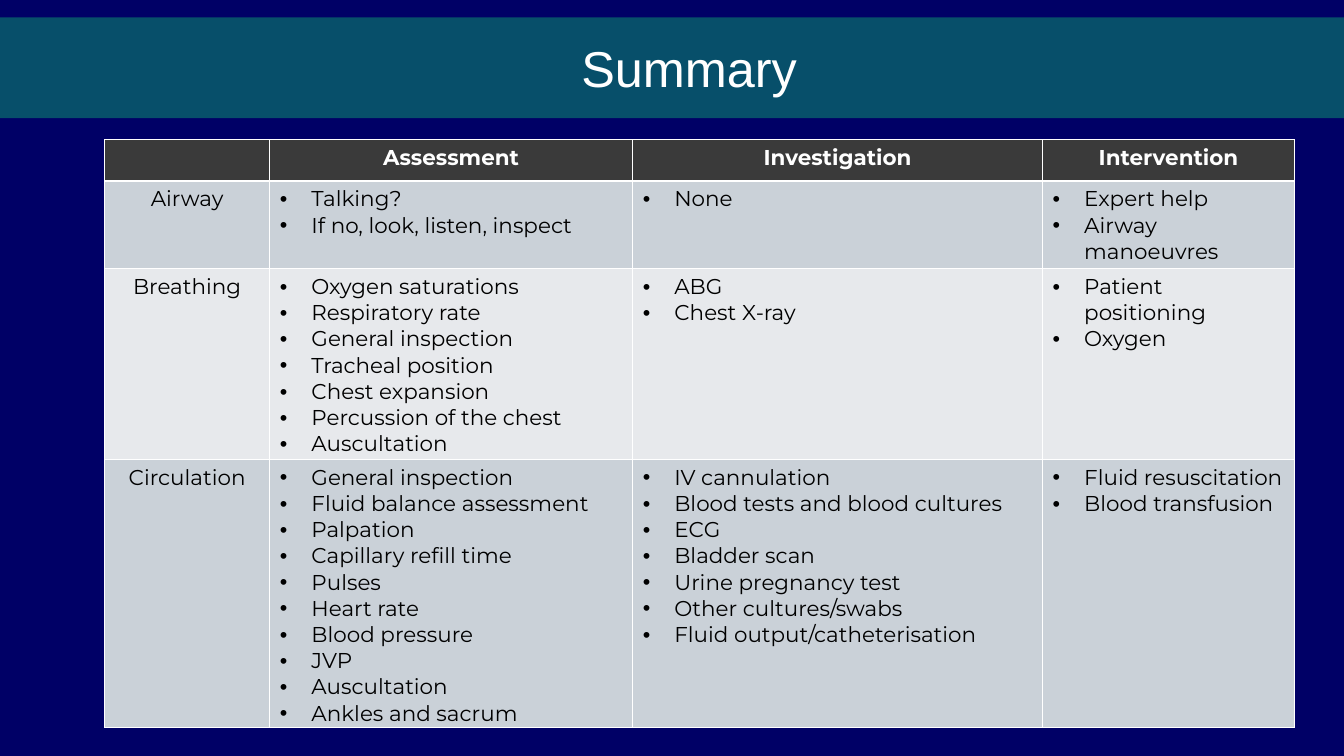
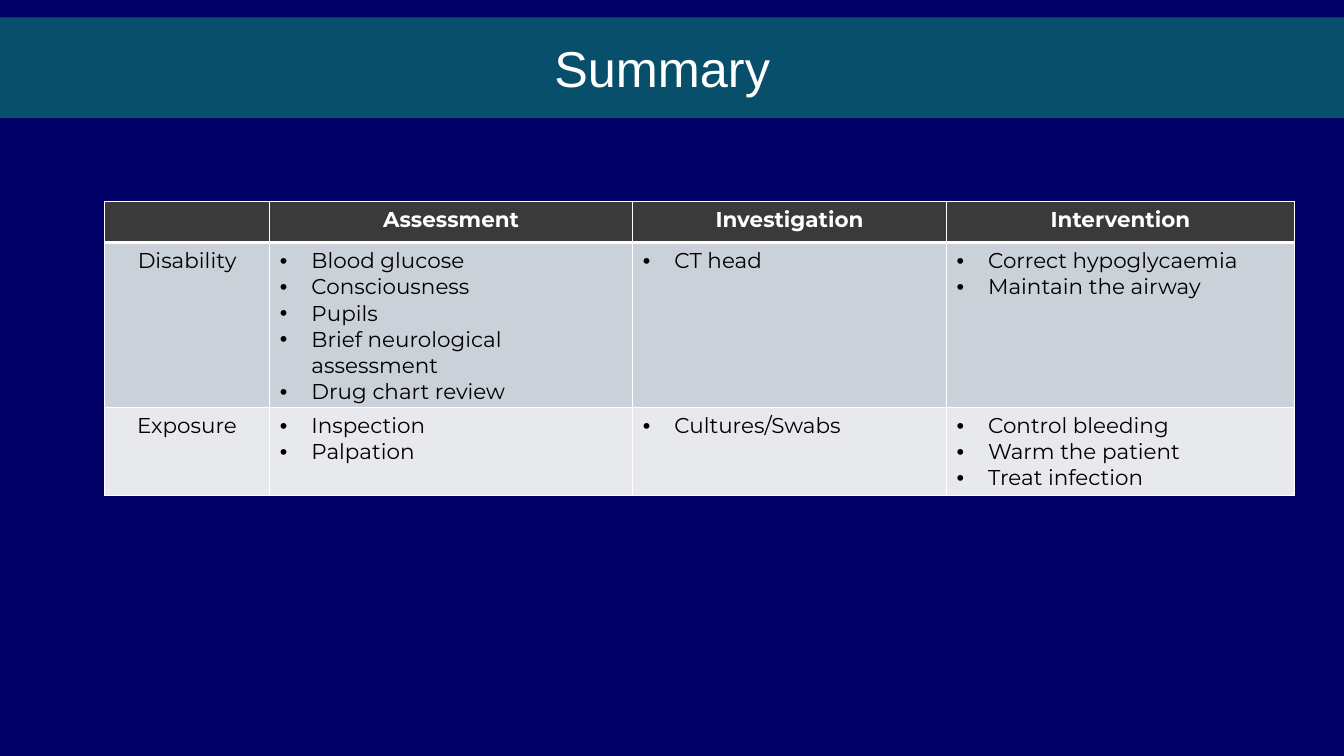
from dataclasses import dataclass

from lxml import etree
from pptx import Presentation
from pptx.dml.color import RGBColor
from pptx.enum.shapes import MSO_SHAPE
from pptx.enum.text import MSO_ANCHOR, MSO_AUTO_SIZE, PP_ALIGN
from pptx.oxml.ns import qn
from pptx.util import Pt

LEFT, CENTER = PP_ALIGN.LEFT, PP_ALIGN.CENTER
TOP = MSO_ANCHOR.TOP
FIT_SHAPE = MSO_AUTO_SIZE.SHAPE_TO_FIT_TEXT
RECTANGLE = MSO_SHAPE.RECTANGLE
TITLE_ONLY = 5

HEADERS = ["", "Assessment", "Investigation", "Intervention"]

SLIDES = [
    {
        "title": "Summary", "title_left": 612, "title_width": 275.8,
        "table_top": 149.8,
        "columns": [177.1, 388.8, 439.2, 270],
        "row_heights": [43.9, 43.9, 43.9, 43.9],
        "rows": [
            ("Airway",
             ["Talking?", "If no, look, listen, inspect"],
             ["None"],
             ["Expert help", "Airway manoeuvres"]),
            ("Breathing",
             ["Oxygen saturations", "Respiratory rate", "General inspection",
              "Tracheal position", "Chest expansion",
              "Percussion of the chest", "Auscultation"],
             ["ABG", "Chest X-ray"],
             ["Patient positioning", "Oxygen"]),
            ("Circulation",
             ["General inspection", "Fluid balance assessment", "Palpation",
              "Capillary refill time", "Pulses", "Heart rate",
              "Blood pressure", "JVP", "Auscultation", "Ankles and sacrum"],
             ["IV cannulation", "Blood tests and blood cultures", "ECG",
              "Bladder scan", "Urine pregnancy test", "Other cultures/swabs",
              "Fluid output/catheterisation"],
             ["Fluid resuscitation", "Blood transfusion"]),
        ],
    },
    {
        "title": "Summary", "title_left": 583.2, "title_width": 274.3,
        "table_top": 216,
        "columns": [177.1, 388.8, 336.2, 373],
        "row_heights": [43.9, 67, 43.9],
        "rows": [
            ("Disability",
             ["Blood glucose", "Consciousness", "Pupils",
              "Brief neurological assessment", "Drug chart review"],
             ["CT head"],
             ["Correct hypoglycaemia", "Maintain the airway"]),
            ("Exposure",
             ["Inspection", "Palpation"],
             ["Cultures/Swabs"],
             ["Control bleeding", "Warm the patient", "Treat infection"]),
        ],
    },
]


@dataclass(frozen=True)
class Theme:
    background: str = "000066"
    band: str = "074F6A"
    header: str = "3A3A3A"
    stripes: tuple = ("CAD1D8", "E7E9EC")
    light: str = "FFFFFF"
    dark: str = "000000"
    title_font: str = "Arial"
    table_font: str = "Montserrat"
    title_size: float = 54
    table_size: float = 23
    thin_line: float = 1
    header_line: float = 3


THEME = Theme()
SLIDE_WIDTH, SLIDE_HEIGHT = 1440, 810
BAND_TOP, BAND_HEIGHT = 18.7, 108
TITLE_TOP, TITLE_HEIGHT = 34.6, 76.3
TABLE_LEFT = 112
SIDE_INSET, TITLE_INSET, CELL_INSET = 10.8, 5.04, 5.6
BULLET_INDENT = 33.8


def fill_solid(fill, color):
    fill.solid()
    fill.fore_color.rgb = RGBColor.from_string(color)


def set_margins(target, vertical):
    target.margin_left = target.margin_right = Pt(SIDE_INSET)
    target.margin_top = target.margin_bottom = Pt(vertical)


def add_bullet(paragraph, color):
    properties = paragraph._p.get_or_add_pPr()
    properties.set("marL", str(Pt(BULLET_INDENT)))
    properties.set("indent", str(-Pt(BULLET_INDENT)))
    bullet_color = etree.SubElement(properties, qn("a:buClr"))
    etree.SubElement(bullet_color, qn("a:srgbClr"), val=color)
    etree.SubElement(properties, qn("a:buFont"), typeface="Arial")
    etree.SubElement(properties, qn("a:buChar"), char="•")


def write_text(frame, lines, font=THEME.table_font, size=THEME.table_size,
               color=THEME.dark, bold=False, align=LEFT, bullets=False):
    """Write one paragraph per line, all in the same format."""
    for index, line in enumerate(lines):
        paragraph = frame.add_paragraph() if index else frame.paragraphs[0]
        paragraph.alignment = align
        if bullets:
            add_bullet(paragraph, color)
        run = paragraph.add_run()
        run.text = line
        run.font.name = font
        run.font.size = Pt(size)
        run.font.bold = bold
        run.font.color.rgb = RGBColor.from_string(color)


def set_borders(cell, top, bottom):
    """Draw the four borders; the schema wants them ahead of the fill."""
    properties = cell._tc.get_or_add_tcPr()
    widths = {"lnL": THEME.thin_line, "lnR": THEME.thin_line,
              "lnT": top, "lnB": bottom}
    for index, (side, width) in enumerate(widths.items()):
        line = etree.Element(qn(f"a:{side}"), w=str(Pt(width)))
        fill = etree.SubElement(line, qn("a:solidFill"))
        etree.SubElement(fill, qn("a:srgbClr"), val=THEME.light)
        properties.insert(index, line)


def format_cell(cell, row):
    """Apply the fill, margins and borders that the row number calls for."""
    stripe = THEME.stripes[(row - 1) % len(THEME.stripes)]
    fill_solid(cell.fill, THEME.header if row == 0 else stripe)
    set_margins(cell, CELL_INSET)
    cell.vertical_anchor = TOP
    set_borders(cell,
                top=THEME.header_line if row == 1 else THEME.thin_line,
                bottom=THEME.header_line if row == 0 else THEME.thin_line)


def add_title_band(slide, text, left, width):
    title = slide.shapes.title
    title.left, title.top = Pt(left), Pt(TITLE_TOP)
    title.width, title.height = Pt(width), Pt(TITLE_HEIGHT)
    frame = title.text_frame
    frame.word_wrap = True
    frame.auto_size = FIT_SHAPE
    frame.vertical_anchor = TOP
    set_margins(frame, TITLE_INSET)
    write_text(frame, [text], font=THEME.title_font, size=THEME.title_size,
               color=THEME.light)

    band = slide.shapes.add_shape(RECTANGLE, 0, Pt(BAND_TOP),
                                  Pt(SLIDE_WIDTH), Pt(BAND_HEIGHT))
    band.shadow.inherit = False
    fill_solid(band.fill, THEME.band)
    band.line.fill.background()
    title._element.addprevious(band._element)


def add_summary_table(slide, top, columns, row_heights, rows):
    table = slide.shapes.add_table(
        len(row_heights), len(columns), Pt(TABLE_LEFT), Pt(top),
        Pt(sum(columns)), Pt(sum(row_heights))).table
    table.first_row = table.horz_banding = False
    for column, width in zip(table.columns, columns):
        column.width = Pt(width)
    for row, height in zip(table.rows, row_heights):
        row.height = Pt(height)

    for row_index, contents in enumerate([HEADERS, *rows]):
        for column_index, content in enumerate(contents):
            cell = table.cell(row_index, column_index)
            format_cell(cell, row_index)
            if row_index == 0 and content:
                write_text(cell.text_frame, [content], color=THEME.light,
                           bold=True, align=CENTER)
            elif row_index and column_index == 0:
                write_text(cell.text_frame, [content], align=CENTER)
            elif row_index:
                write_text(cell.text_frame, content, bullets=True)


def main():
    presentation = Presentation()
    presentation.slide_width = Pt(SLIDE_WIDTH)
    presentation.slide_height = Pt(SLIDE_HEIGHT)
    fill_solid(presentation.slide_master.background.fill, THEME.background)
    for content in SLIDES:
        slide = presentation.slides.add_slide(
            presentation.slide_layouts[TITLE_ONLY])
        add_title_band(slide, content["title"], content["title_left"],
                       content["title_width"])
        add_summary_table(slide, content["table_top"], content["columns"],
                          content["row_heights"], content["rows"])
    presentation.save("out.pptx")


if __name__ == "__main__":
    main()
